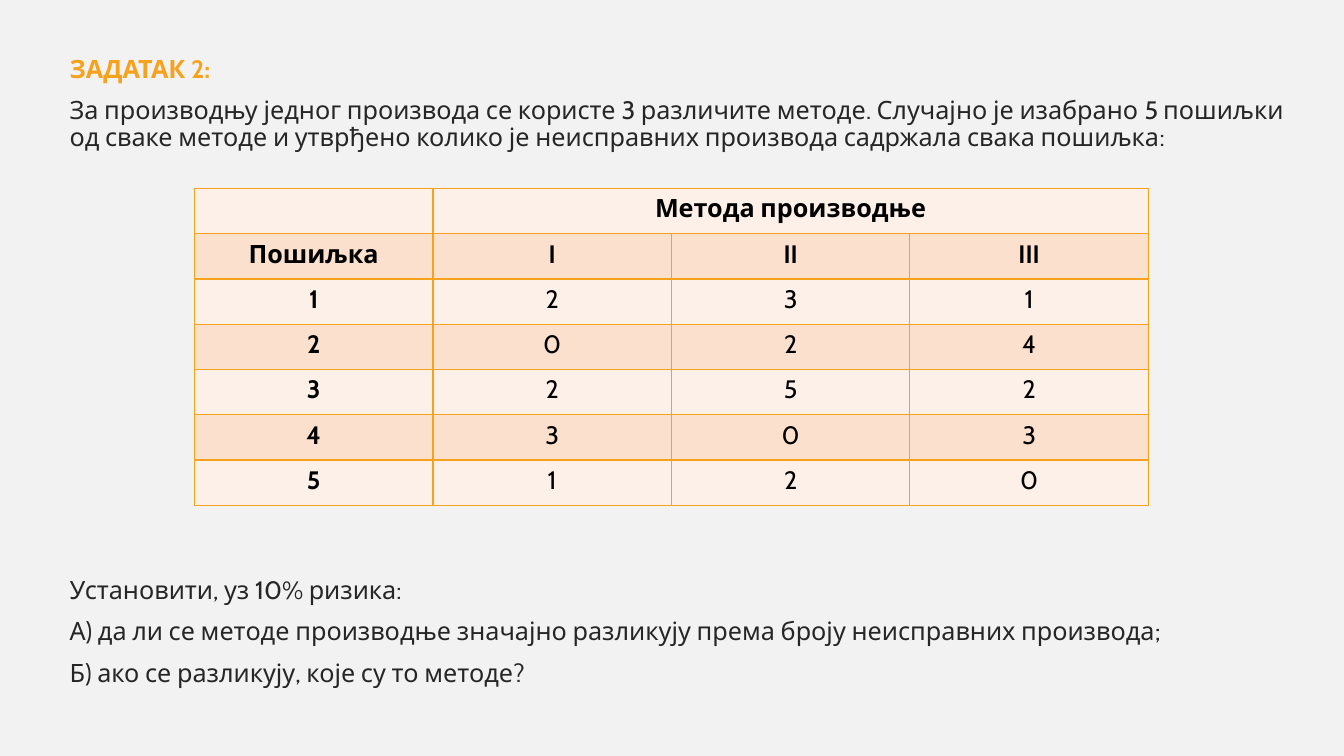
from lxml import etree
from pptx import Presentation
from pptx import util as u
from pptx.dml.color import RGBColor
from pptx.enum import text
from pptx.oxml import ns

ORANGE = RGBColor(0xF6, 0xA2, 0x1D)
INK = RGBColor(0x26, 0x26, 0x26)
BLACK = RGBColor(0, 0, 0)
PAPER = RGBColor(0xF2, 0xF2, 0xF2)
ROW_FILLS = (RGBColor(0xFD, 0xF0, 0xE8), RGBColor(0xFB, 0xE0, 0xCD))

TASK = [
    ("ЗАДАТАК 2:", ORANGE, True, 0),
    ("За производњу једног производа се користе 3 различите методе. "
     "Случајно је изабрано 5 пошиљки од сваке методе и утврђено колико је "
     "неисправних производа садржала свака пошиљка:", INK, False, 10),
    ("Установити, уз 10% ризика:", INK, False, 304),
    ("А) да ли се методе производње значајно разликују према броју "
     "неисправних производа;", INK, False, 10),
    ("Б) ако се разликују, које су то методе?", INK, False, 10),
]
DEFECTS = [
    ("", "Метода производње", "", ""),
    ("Пошиљка", "I", "II", "III"),
    ("1", "2", "3", "1"),
    ("2", "0", "2", "4"),
    ("3", "2", "5", "2"),
    ("4", "3", "0", "3"),
    ("5", "1", "2", "0"),
]


class TaskSlide:
    font = "Cabin"
    size = u.Pt(18)

    def __init__(self, deck):
        self.slide = deck.slides.add_slide(deck.slide_layouts[1])
        background = self.slide.background.fill
        background.solid()
        background.fore_color.rgb = PAPER
        title = self.slide.shapes.title
        title.element.getparent().remove(title.element)

    def run(self, paragraph, wording, color, bold):
        run = paragraph.add_run()
        run.text = wording
        run.font.name = self.font
        run.font.size = self.size
        run.font.bold = bold
        run.font.color.rgb = color

    def body(self, left, top, width, height, lines):
        body = self.slide.placeholders[1]
        body.left, body.top = u.Cm(left), u.Cm(top)
        body.width, body.height = u.Cm(width), u.Cm(height)
        frame = body.text_frame
        frame.word_wrap = True
        frame.auto_size = text.MSO_AUTO_SIZE.NONE
        frame.vertical_anchor = text.MSO_ANCHOR.TOP
        for index, (wording, color, bold, before) in enumerate(lines):
            paragraph = frame.add_paragraph() if index else frame.paragraphs[0]
            properties = paragraph._p.get_or_add_pPr()
            properties.set("marL", "0")
            properties.set("indent", "0")
            etree.SubElement(properties, ns.qn("a:buNone"))
            paragraph.alignment = text.PP_ALIGN.LEFT
            paragraph.line_spacing = 0.9
            paragraph.space_before = u.Pt(before)
            self.run(paragraph, wording, color, bold)

    def border(self, cell, color):
        properties = cell._tc.get_or_add_tcPr()
        for side in ("a:lnL", "a:lnR", "a:lnT", "a:lnB"):
            line = etree.SubElement(properties, ns.qn(side), w=str(u.Pt(1)))
            fill = etree.SubElement(line, ns.qn("a:solidFill"))
            etree.SubElement(fill, ns.qn("a:srgbClr"), val=str(color))

    def table(self, left, top, column_width, row_height, rows):
        columns = len(rows[0])
        table = self.slide.shapes.add_table(
            len(rows), columns, u.Cm(left), u.Cm(top),
            u.Cm(column_width * columns), u.Cm(row_height * len(rows))).table
        table.cell(0, 1).merge(table.cell(0, columns - 1))
        for r, row in enumerate(rows):
            for c, wording in enumerate(row):
                cell = table.cell(r, c)
                self.border(cell, ORANGE)
                cell.fill.solid()
                cell.fill.fore_color.rgb = ROW_FILLS[r % 2]
                if wording:
                    paragraph = cell.text_frame.paragraphs[0]
                    paragraph.alignment = text.PP_ALIGN.CENTER
                    self.run(paragraph, wording, BLACK, r < 2 or c == 0)


def main():
    deck = Presentation()
    deck.slide_width, deck.slide_height = u.Cm(33.87), u.Cm(19.05)
    task = TaskSlide(deck)
    task.body(1.5, 1.3, 31.88, 16.92, TASK)
    task.table(4.9, 4.75, 6.01, 1.14, DEFECTS)
    deck.save("out.pptx")


if __name__ == "__main__":
    main()
